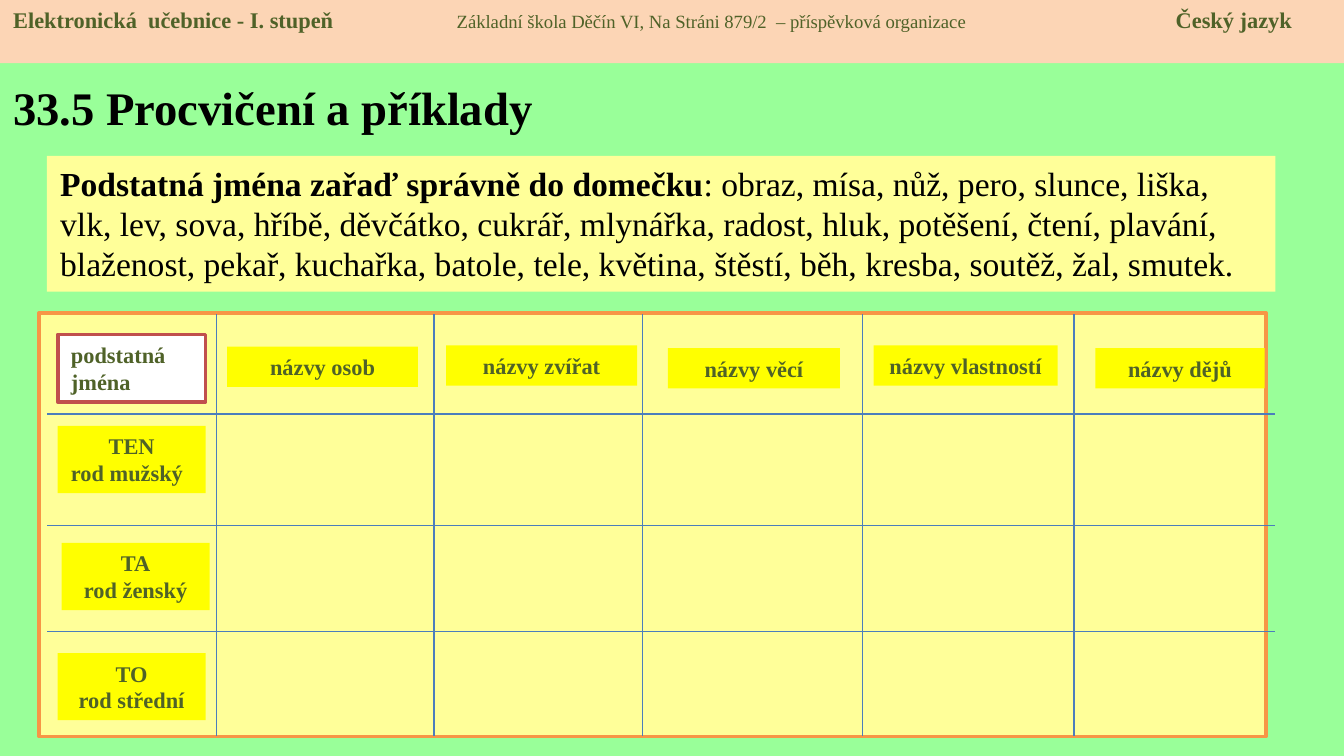
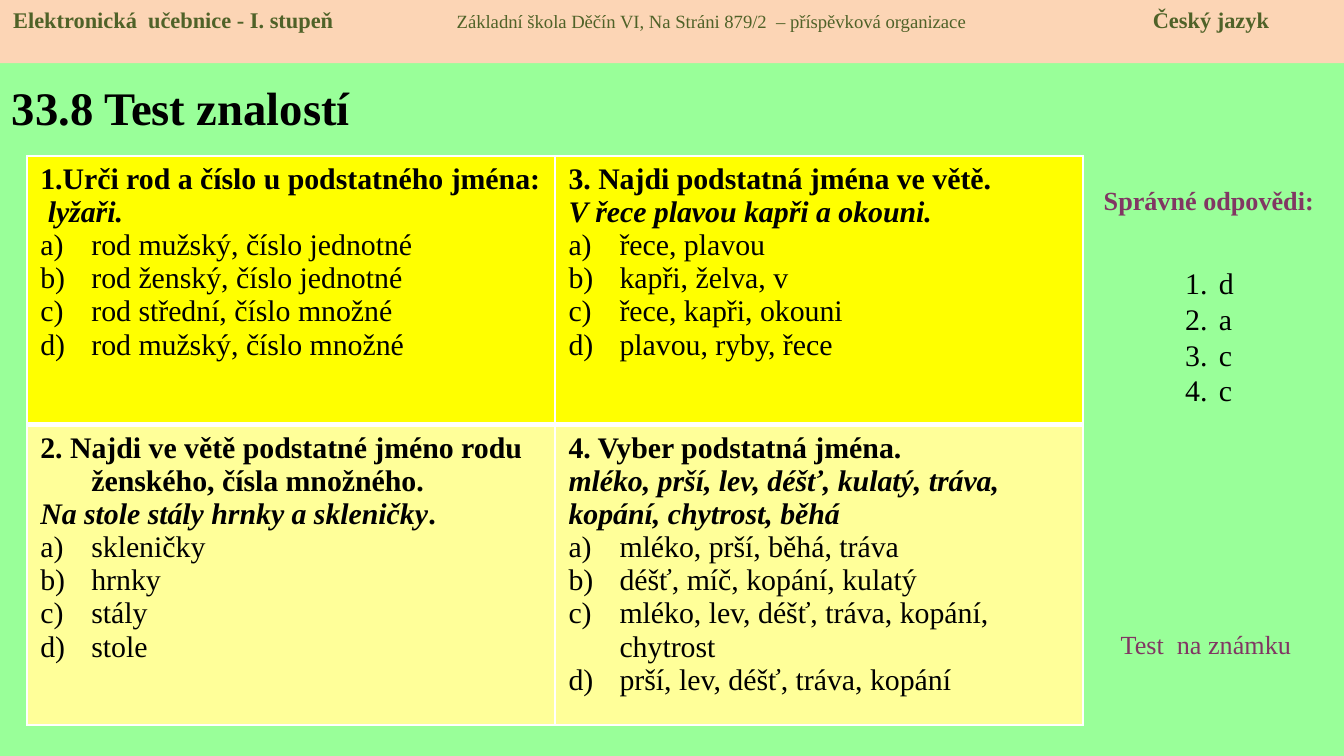
from lxml.etree import SubElement
from pptx import Presentation
from pptx.dml.color import RGBColor
from pptx.enum.shapes import MSO_CONNECTOR, MSO_SHAPE
from pptx.enum.text import MSO_ANCHOR, PP_ALIGN
from pptx.oxml import parse_xml
from pptx.oxml.ns import nsdecls, qn
from pptx.util import Inches, Pt

MINT, PEACH, CREAM, YELLOW, WHITE = "99FF99", "FCD5B5", "FFFF99", "FFFF00", "FFFFFF"
OLIVE, BLACK, PLUM = "4F6228", "000000", "813763"
ORANGE, RED, BLUE = "F79646", "C0504D", "4B7EBC"
LEFT, MID = PP_ALIGN.LEFT, PP_ALIGN.CENTER
PLAIN = {"name": "Times New Roman", "size": 12, "bold": False, "italic": False, "color": BLACK}
LABEL = {"bold": True, "color": OLIVE}
HANG = 0.38
NUMBER, LETTER = "arabicPeriod", "alphaLcParenR"

ROWS = [
    (0.14, 0.84, "TEN", "rod mužský", LEFT),
    (0.17, 1.71, "TA", "rod ženský", MID),
    (0.14, 2.53, "TO", "rod střední", MID),
]
HEADS = [
    (1.4, 0.25, 1.42, "názvy osob"),
    (3.03, 0.24, 1.42, "názvy zvířat"),
    (4.68, 0.26, 1.28, "názvy věcí"),
    (6.21, 0.24, 1.37, "názvy vlastností"),
    (7.86, 0.26, 1.26, "názvy dějů"),
]
WALLS = [1.32, 2.94, 4.49, 6.13, 7.7]
FLOORS = [0.75, 1.58, 2.37]
TASK = "Podstatná jména zařaď správně do domečku"
WORDS = (
    ": obraz, mísa, nůž, pero, slunce, liška, vlk, lev, sova, hříbě, děvčátko, "
    "cukrář, mlynářka, radost, hluk, potěšení, čtení, plavání, blaženost, pekař, "
    "kuchařka, batole, tele, květina, štěstí, běh, kresba, soutěž, žal, smutek."
)
BOLD = {"bold": True}
SLANT = {"bold": True, "italic": True}
QUIZ = [
    [
        (
            0,
            [[("1.Urči rod a číslo u podstatného jména:  ", BOLD), ("lyžaři.", SLANT)]],
            ["rod mužský, číslo jednotné", "rod ženský, číslo jednotné",
             "rod střední, číslo množné", "rod mužský, číslo množné"],
        ),
        (
            HANG,
            [[("3. Najdi podstatná jména ve větě.", BOLD)],
             [("V řece plavou kapři a okouni.", SLANT)]],
            ["řece, plavou", "kapři, želva, v", "řece, kapři, okouni", "plavou, ryby, řece"],
        ),
    ],
    [
        (
            HANG,
            [[("2. Najdi ve větě podstatné jméno rodu ženského, čísla množného.", BOLD)],
             [("Na stole stály hrnky a skleničky", SLANT), (".", BOLD)]],
            ["skleničky", "hrnky", "stály", "stole"],
        ),
        (
            0,
            [[("4. Vyber podstatná jména.", BOLD)],
             [("mléko, prší, lev, déšť, kulatý, tráva, kopání, chytrost, běhá", SLANT)]],
            ["mléko, prší, běhá, tráva", "déšť, míč, kopání, kulatý",
             "mléko, lev, déšť, tráva, kopání, chytrost", "prší, lev, déšť, tráva, kopání"],
        ),
    ],
]


def tint(code):
    return RGBColor.from_string(code)


def style(font, **look):
    look = {**PLAIN, **look}
    font.color.rgb = tint(look.pop("color"))
    look["size"] = Pt(look["size"])
    for name, value in look.items():
        setattr(font, name, value)


def para(frame, runs, align=LEFT, hang=0, mark=None, **look):
    line = frame.paragraphs[0]
    if line.runs:
        line = frame.add_paragraph()
    line.alignment = align
    for text, extra in runs:
        run = line.add_run()
        run.text = text
        style(run.font, **{**look, **extra})
    props = line._p.get_or_add_pPr()
    if hang:
        props.set("marL", str(Inches(hang)))
        props.set("indent", str(-Inches(hang)))
    if mark:
        SubElement(props, qn("a:buAutoNum"), type=mark)
    return line


def block(slide, box, fill, edge=None):
    shape = slide.shapes.add_shape(MSO_SHAPE.RECTANGLE, *map(Inches, box))
    shape.shadow.inherit = False
    shape.fill.solid()
    shape.fill.fore_color.rgb = tint(fill)
    if edge:
        shape.line.color.rgb = tint(edge)
        shape.line.width = Pt(2)
    else:
        shape.line.fill.background()
    shape.text_frame.word_wrap = True
    shape.text_frame.vertical_anchor = MSO_ANCHOR.TOP
    return shape.text_frame


def note(slide, box, anchor=MSO_ANCHOR.TOP):
    frame = slide.shapes.add_textbox(*map(Inches, box)).text_frame
    frame.word_wrap = True
    frame.vertical_anchor = anchor
    return frame


def rule(slide, *ends):
    line = slide.shapes.add_connector(MSO_CONNECTOR.STRAIGHT, *map(Inches, ends))
    line.line.color.rgb = tint(BLUE)
    line.line.width = Pt(0.75)
    SubElement(line._element.spPr, qn("a:effectLst"))


def band(slide, box, stop):
    frame = block(slide, box, PEACH)
    line = para(
        frame,
        [
            ("Elektronická  učebnice - I. stupeň\t", {}),
            ("Základní škola Děčín VI, Na Stráni 879/2  – příspěvková organizace\t",
             {"size": 10, "bold": False}),
            ("Český jazyk", {}),
        ],
        **LABEL,
    )
    tabs = SubElement(line._p.get_or_add_pPr(), qn("a:tabLst"))
    for place in (3.3, stop):
        SubElement(tabs, qn("a:tab"), pos=str(Inches(place)), algn="l")


def start(deck, title, box, stop):
    slide = deck.slides.add_slide(deck.slide_layouts[6])
    slide.background.fill.solid()
    slide.background.fill.fore_color.rgb = tint(MINT)
    para(note(slide, box, MSO_ANCHOR.MIDDLE), [(title, {})], size=25, bold=True)
    band(slide, (0, 0, 10, 0.47), stop)
    return slide


def house(slide, box):
    left, top, width, height = box
    block(slide, box, CREAM, ORANGE)
    for floor in FLOORS:
        rule(slide, left + 0.06, top + floor, left + width + 0.07, top + floor)
    frame = block(slide, (left + 0.14, top + 0.16, 1.1, 0.5), WHITE, RED)
    for word in ("podstatná", "jména"):
        para(frame, [(word, {})], **LABEL)
    for x, y, word, gender, align in ROWS:
        frame = block(slide, (left + x, top + y, 1.1, 0.5), YELLOW)
        para(frame, [(word, {})], MID, **LABEL)
        para(frame, [(gender, {})], align, **LABEL)
    for x, y, wide, word in HEADS:
        frame = block(slide, (left + x, top + y, wide, 0.3), YELLOW)
        para(frame, [(word, {})], MID, **LABEL)
    for wall in WALLS:
        rule(slide, left + wall, top + 0.01, left + wall, top + height)


def border(cell, widths):
    props = cell._tc.get_or_add_tcPr()
    for spot, (side, width) in enumerate(zip("LRTB", widths)):
        props.insert(spot, parse_xml(
            f'<a:ln{side} {nsdecls("a")} w="{Pt(width)}"><a:solidFill>'
            f'<a:srgbClr val="{WHITE}"/></a:solidFill></a:ln{side}>'
        ))


def quiz(slide, box):
    grid = slide.shapes.add_table(2, 2, *map(Inches, box)).table
    grid.horz_banding = False
    for col in grid.columns:
        col.width = Inches(box[2] / 2)
    looks = [(2, YELLOW, (1, 1, 1, 3)), (2.23, CREAM, (1, 1, 3, 1))]
    for r, (tall, fill, widths) in enumerate(looks):
        grid.rows[r].height = Inches(tall)
        for c, (hang, asks, picks) in enumerate(QUIZ[r]):
            cell = grid.cell(r, c)
            cell.fill.solid()
            cell.fill.fore_color.rgb = tint(fill)
            border(cell, widths)
            for ask in asks:
                para(cell.text_frame, ask, hang=hang, size=16)
            for pick in picks:
                para(cell.text_frame, [(pick, {})], hang=HANG, mark=LETTER, size=16)


def key(slide, box):
    left, top, width, height = box
    frame = note(slide, (left, top, width, 0.34))
    para(frame, [("Správné odpovědi:", {})], MID, size=14, bold=True, color=PLUM)
    frame = note(slide, (left + 0.67, top + 0.6, 0.55, 1.7))
    for letter in "dacc":
        para(frame, [(letter, {})], hang=0.25, mark=NUMBER, size=16)
    frame = note(slide, (left + 0.19, top + height - 0.34, 1.57, 0.34))
    para(frame, [("Test  na známku", {})], size=14, color=PLUM)


def drill(deck):
    slide = start(deck, "33.5 Procvičení a příklady", (0, 0.47, 4.37, 0.65), 8.65)
    house(slide, (0.29, 2.33, 9.13, 3.15))
    frame = block(slide, (0.35, 1.16, 9.14, 1.01), CREAM)
    para(frame, [(TASK, BOLD), (WORDS, {})], size=18)


def test(deck):
    slide = start(deck, "33.8 Test znalostí", (-0.01, 0.47, 3.19, 0.65), 8.48)
    quiz(slide, (0.2, 1.16, 7.86, 4.23))
    key(slide, (8.05, 1.32, 1.89, 3.65))


def main():
    deck = Presentation()
    deck.slide_width = Inches(10)
    deck.slide_height = deck.slide_width * 9 // 16
    drill(deck)
    test(deck)
    deck.save("out.pptx")


if __name__ == "__main__":
    main()
